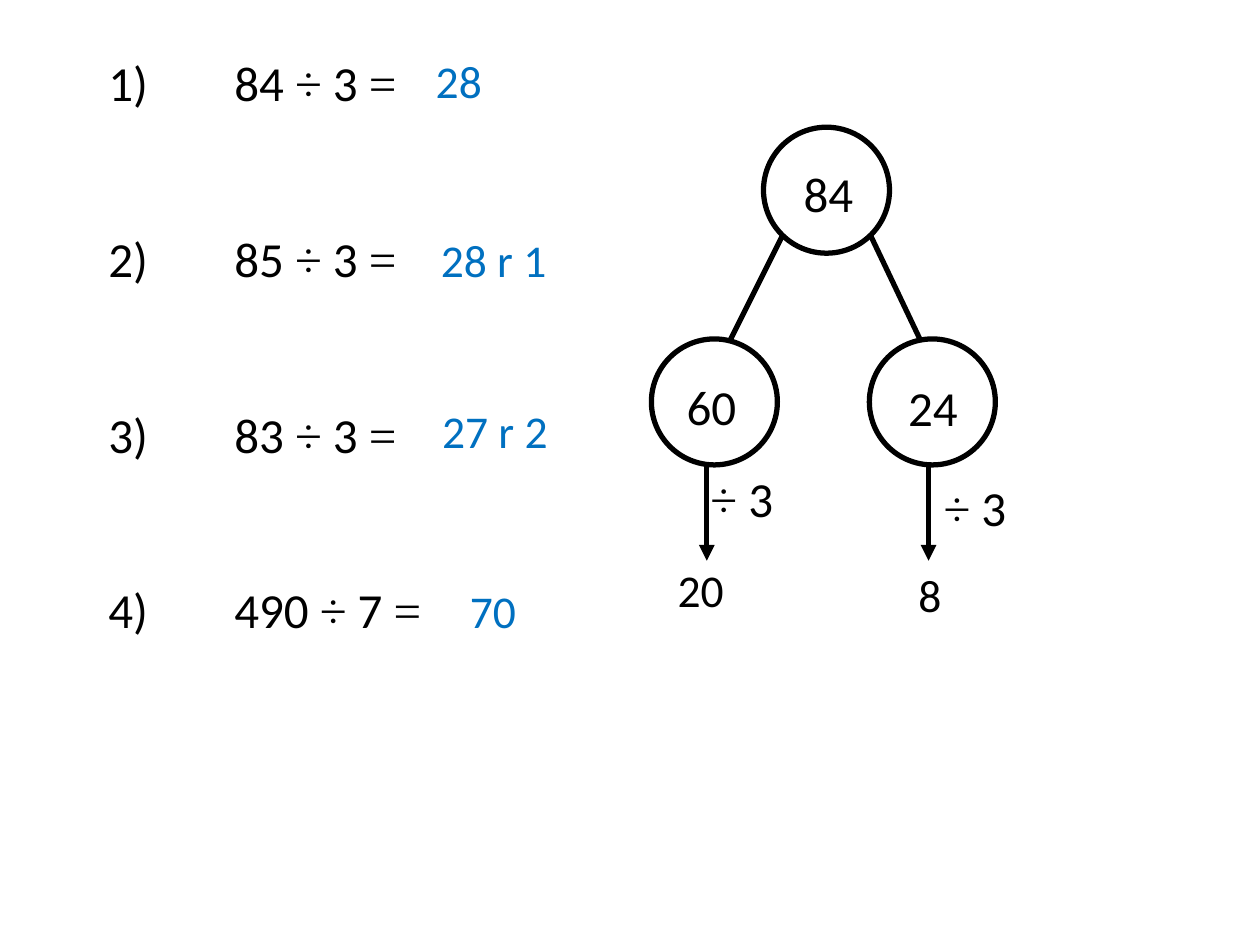
"""Build a division worksheet slide with a part-whole model."""
import itertools

import lxml.etree
import pptx
import pptx.dml.color
import pptx.enum.shapes
import pptx.enum.text
import pptx.oxml
import pptx.oxml.ns
import pptx.util

COLORS = {"ink": "000000", "answer": "0070C0", "paper": "FFFFFF"}
FONTS = {False: "Calibri", True: "Times New Roman"}
SYMBOLS = "÷="
COLS, ROWS = 100, 75


def rgb(name):
    return pptx.dml.color.RGBColor.from_string(COLORS[name])


def add_text(p, text, size=28, color="ink"):
    for is_symbol, chars in itertools.groupby(text, lambda c: c in SYMBOLS):
        r = p.add_run()
        r.text = "".join(chars)
        r.font.name = FONTS[is_symbol]
        r.font.size = pptx.util.Pt(size)
        r.font.color.rgb = rgb(color)


class Sheet:
    """Holds the style, the grid and the current slide."""

    def __init__(self, prs):
        self.slide = prs.slides.add_slide(prs.slide_layouts[1])
        self.cell_w = prs.slide_width / COLS
        self.cell_h = prs.slide_height / ROWS
        self.line_width = pptx.util.Pt(3)
        title = self.slide.shapes.title
        title.element.getparent().remove(title.element)

    def at(self, x, y):
        return round(x * self.cell_w), round(y * self.cell_h)

    def exercises(self, x, y, w, h, items, gap, stops):
        sp = self.slide.placeholders[1]
        sp.left, sp.top = self.at(x, y)
        sp.width, sp.height = self.at(w, h)
        tf = sp.text_frame
        tf.auto_size = pptx.enum.text.MSO_AUTO_SIZE.NONE
        for i, item in enumerate(items):
            p = tf.paragraphs[0] if i == 0 else tf.add_paragraph()
            pPr = p._p.get_or_add_pPr()
            pPr.set("marL", "0")
            pPr.set("indent", "0")
            lxml.etree.SubElement(pPr, pptx.oxml.ns.qn("a:buNone"))
            tabs = lxml.etree.SubElement(pPr, pptx.oxml.ns.qn("a:tabLst"))
            for stop in stops:
                tab = lxml.etree.SubElement(tabs, pptx.oxml.ns.qn("a:tab"))
                tab.set("pos", str(round(stop * self.cell_w)))
                tab.set("algn", "l")
            p.space_before = pptx.util.Pt(gap if i else 0)
            add_text(p, f"{i + 1})\t\t{item}")

    def label(self, x, y, text, w=10.5, h=5.5, **style):
        sp = self.slide.shapes.add_textbox(*self.at(x, y), *self.at(w, h))
        tf = sp.text_frame
        tf.word_wrap = True
        add_text(tf.paragraphs[0], text, **style)

    def circle(self, x, y, size=10):
        sp = self.slide.shapes.add_shape(
            pptx.enum.shapes.MSO_SHAPE.OVAL, *self.at(x, y), *self.at(size, size))
        sp.shadow.inherit = False
        sp.fill.solid()
        sp.fill.fore_color.rgb = rgb("paper")
        sp.line.color.rgb = rgb("ink")
        sp.line.width = self.line_width

    def line(self, start, end, arrow=False):
        sp = self.slide.shapes.add_connector(
            pptx.enum.shapes.MSO_CONNECTOR.STRAIGHT, *self.at(*start), *self.at(*end))
        sp.line.color.rgb = rgb("ink")
        sp.line.width = self.line_width
        lxml.etree.SubElement(sp._element.spPr, pptx.oxml.ns.qn("a:effectLst"))
        if arrow:
            tail = lxml.etree.SubElement(sp.line._get_or_add_ln(), pptx.oxml.ns.qn("a:tailEnd"))
            tail.set("type", "triangle")


def main():
    prs = pptx.Presentation()
    prs.slide_width = pptx.util.Inches(10)
    prs.slide_height = pptx.util.Inches(7.5)
    sheet = Sheet(prs)

    sheet.exercises(7.6, 3.7, 31.4, 52.8, ["84 ÷ 3 =", "85 ÷ 3 =", "83 ÷ 3 =", "490 ÷ 7 ="],
                    gap=66.7, stops=(5, 10))

    for x, y in ((60.6, 10.1), (51.7, 26.9), (69, 26.9)):
        sheet.circle(x, y)
    for start, end in (((62.1, 18.7), (58, 26.9)), ((69.1, 18.7), (73, 26.9))):
        sheet.line(start, end)
    for x, y, text in ((62.8, 12.5, "84"), (53.5, 29.4, "60"), (71.1, 29.5, "24"),
                       (55.4, 36.7, "÷ 3"), (73.9, 37.4, "÷ 3")):
        sheet.label(x, y, text)
    for x in (56.1, 73.7):
        sheet.line((x, 36.9), (x, 44.5), arrow=True)
    for x, y, text in ((52.8, 44.1, "20"), (71.9, 44.5, "8")):
        sheet.label(x, y, text, size=26)

    for x, y, text in ((33.6, 3.7, "28"), (34, 17.9, "28 r 1"),
                       (34.1, 31.5, "27 r 2"), (36.3, 45.8, "70")):
        sheet.label(x, y, text, size=26, color="answer")

    prs.save("out.pptx")


if __name__ == "__main__":
    main()
